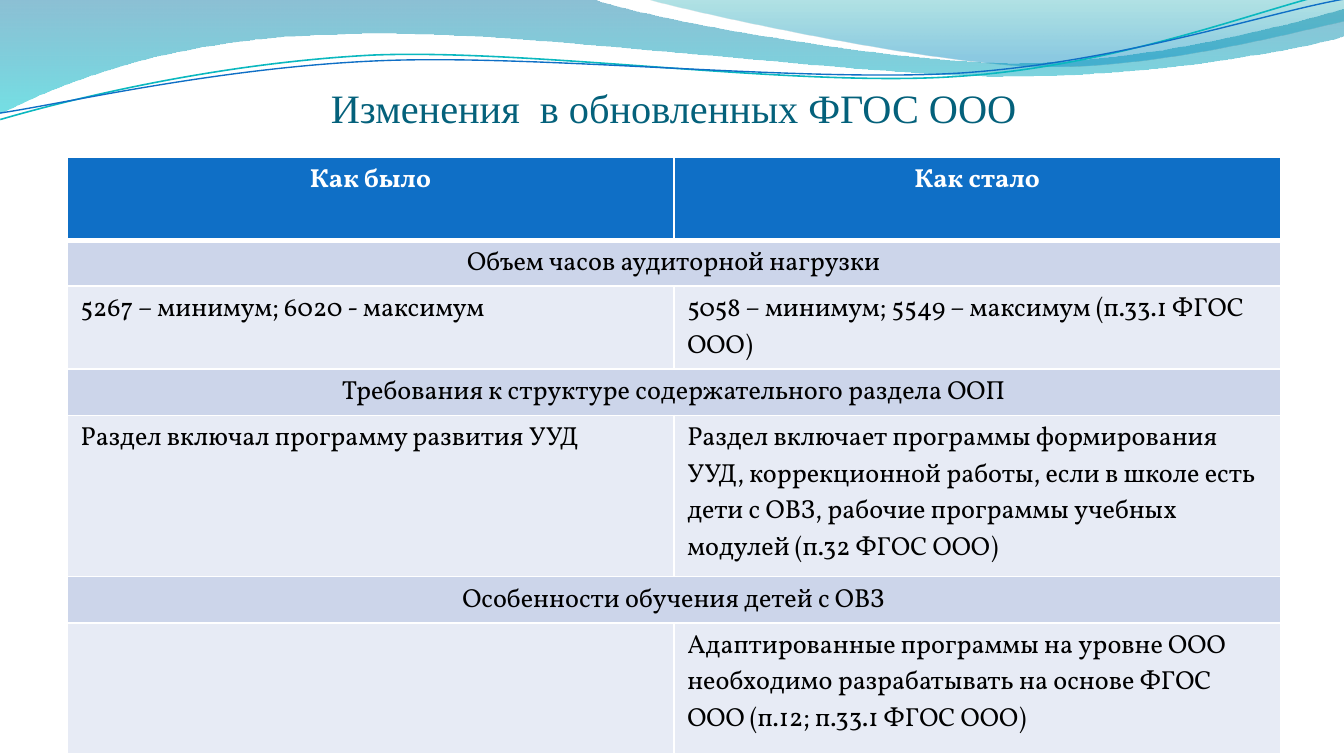
import pptx
import pptx.util
import pptx.dml.color
import pptx.enum.text
import pptx.oxml.ns
from lxml import etree

Pt = pptx.util.Pt
RGB = pptx.dml.color.RGBColor
ALIGN = pptx.enum.text.PP_ALIGN
qn = pptx.oxml.ns.qn

WHITE = RGB(0xFF, 0xFF, 0xFF)
BLACK = RGB(0, 0, 0)
BLUE = RGB(0x0F, 0x6F, 0xC6)
TEAL = RGB(0x0A, 0xB8, 0xBF)
INK = RGB(0x04, 0x61, 0x7B)
BAND = RGB(0xCC, 0xD5, 0xEA)
PALE = RGB(0xE7, 0xEB, 0xF5)
SEA = RGB(0x00, 0x74, 0xA1)
AQUA = RGB(0x00, 0xC6, 0xCF)
GREEN = RGB(0x00, 0xA1, 0xA9)
SKY = RGB(0x00, 0x8B, 0xBF)

TILT = 357.3
WAVES = [
    ([(0, 0), (317, -0.5), (343, 9.5, 478, 34, 546, 34),
      (614, 34, 690, 13.5, 720, 5), (720.5, 19.5),
      (708, 24, 626, 41, 537, 41), (448, 40.5, 275, 15, 185, 18.5),
      (93, 19.5, 33, 44.5, -0.5, 61)],
     [(0, SEA, 45), (1, AQUA, 55)]),
    ([(345, -0.5), (366.5, 6, 491, 33, 553.5, 35.5),
      (616.5, 37.5, 692, 17.5, 720, 11.5), (720, 0)],
     [(0, GREEN, 30), (0.8, SKY, 45)]),
]
LINES = [
    ([(-1, 47.1), (33.8, 38.7, 114.1, 22.4, 199.8, 22),
      (285.3, 22.5, 425.2, 50.1, 511.9, 48.2),
      (599.5, 46.8, 676.9, 19.4, 719.8, 11.9)], TEAL, 0.85),
    ([(-1, 43.6), (33.3, 40.2, 118.1, 24.6, 204.2, 25.2),
      (290.2, 25.7, 429.3, 47.8, 515.5, 46.4),
      (601.7, 44.4, 678.3, 22, 721.1, 16.5)], BLUE, 0.75),
]
ROWS = [
    (44.5, ["Как было", "Как стало"]),
    (24.7, ["Объем часов аудиторной нагрузки"]),
    (44.5, ["5267 – минимум; 6020 - максимум",
            "5058 – минимум; 5549 – максимум (п.33.1 ФГОС ООО)"]),
    (24.7, ["Требования к структуре содержательного раздела ООП"]),
    (86.4, ["Раздел включал программу развития УУД",
            "Раздел включает программы формирования УУД, коррекционной "
            "работы, если в школе есть дети с ОВЗ, рабочие программы "
            "учебных модулей (п.32 ФГОС ООО)"]),
    (24.7, ["Особенности обучения детей с ОВЗ"]),
    (70, ["", "Адаптированные программы на уровне ООО необходимо "
              "разрабатывать на основе ФГОС ООО (п.12; п.33.1 ФГОС ООО)"]),
]


def bend(shape, legs):
    """Turn each run of three straight legs into one cubic curve."""
    parts = iter(list(shape._element.iter(qn("a:lnTo"))))
    for leg in legs:
        first = next(parts)
        if len(leg) == 6:
            first.tag = qn("a:cubicBezTo")
            for part in (next(parts), next(parts)):
                first.append(part[0])
                part.getparent().remove(part)


def outline(slide, left, top, route, close):
    """Draw a route of straight and curved legs as a freeform."""
    dots = [(Pt(leg[i]), Pt(leg[i + 1]))
            for leg in route for i in range(0, len(leg), 2)]
    pen = slide.shapes.build_freeform(*dots[0], scale=1.0)
    pen.add_line_segments(dots[1:], close=close)
    shape = pen.convert_to_shape(Pt(left), Pt(top))
    shape.shadow.inherit = False
    bend(shape, route[1:])
    return shape


def shade(shape, stops):
    """Fill a shape with a see-through gradient that runs downwards."""
    shape.fill.gradient()
    shape.fill.gradient_angle = 270
    for stop, (place, tint, alpha) in zip(shape.fill.gradient_stops, stops):
        stop.position = place
        stop.color.rgb = tint
    marks = shape._element.spPr.iter(qn("a:srgbClr"))
    for mark, (place, tint, alpha) in zip(list(marks), stops):
        etree.SubElement(mark, qn("a:alpha"), val=str(alpha * 1000))


def add_waves(slide, left, top):
    """Draw the waves and thin lines along the top edge."""
    for route, stops in WAVES:
        shape = outline(slide, left, top, route, True)
        shape.line.fill.background()
        shade(shape, stops)
    for route, tint, width in LINES:
        shape = outline(slide, left, top, route, False)
        shape.rotation = TILT
        shape.fill.background()
        shape.line.color.rgb = tint
        shape.line.width = Pt(width)


def add_title(slide, left, top, width, height):
    """Place the centred title in its box."""
    box = slide.shapes.add_textbox(Pt(left), Pt(top), Pt(width), Pt(height))
    frame = box.text_frame
    frame.word_wrap = True
    frame.vertical_anchor = pptx.enum.text.MSO_ANCHOR.BOTTOM
    frame.margin_left = frame.margin_right = frame.margin_bottom = 0
    frame.margin_top = Pt(3.6)
    para = frame.paragraphs[0]
    para.text = "Изменения  в обновленных ФГОС ООО"
    para.alignment = ALIGN.CENTER
    para.font.name = "Times New Roman"
    para.font.size = Pt(21.6)
    para.font.color.rgb = INK


def edge(cell, side, width):
    """Give one side of a cell a white border."""
    line = etree.SubElement(cell._tc.get_or_add_tcPr(), qn("a:ln" + side),
                            w=str(Pt(width)))
    fill = etree.SubElement(line, qn("a:solidFill"))
    etree.SubElement(fill, qn("a:srgbClr"), val=str(WHITE))


def style(cell, text, fill, ink, head, mid):
    """Write and format one cell."""
    for side in "LRTB":
        edge(cell, side, 3 if head and side == "B" else 1)
    cell.fill.solid()
    cell.fill.fore_color.rgb = fill
    cell.margin_left = cell.margin_right = Pt(7.2)
    cell.margin_top = cell.margin_bottom = Pt(3)
    para = cell.text_frame.paragraphs[0]
    para.text = text
    para.alignment = ALIGN.CENTER if mid else ALIGN.LEFT
    para.font.name = "Vollkorn"
    para.font.size = Pt(14)
    para.font.bold = head
    para.font.color.rgb = ink


def add_grid(slide, left, top, width):
    """Build the table that compares the old and new rules."""
    height = sum(row[0] for row in ROWS)
    grid = slide.shapes.add_table(len(ROWS), 2, Pt(left), Pt(top),
                                  Pt(width), Pt(height)).table
    grid.horz_banding = False
    for col in grid.columns:
        col.width = Pt(width / 2)
    for r, (tall, texts) in enumerate(ROWS):
        grid.rows[r].height = Pt(tall)
        head, wide = r == 0, len(texts) == 1
        fill = BLUE if head else BAND if wide else PALE
        if wide:
            grid.cell(r, 0).merge(grid.cell(r, 1))
        for c, text in enumerate(texts):
            style(grid.cell(r, c), text, fill, WHITE if head else BLACK,
                  head, head or wide)


def main():
    """Build and save the slide."""
    deck = pptx.Presentation()
    deck.slide_width, deck.slide_height = Pt(720), Pt(405)
    slide = deck.slides.add_slide(deck.slide_layouts[6])
    add_waves(slide, 0, 0)
    add_title(slide, 37, 45.5, 648, 25)
    add_grid(slide, 36, 84.2, 650)
    deck.save("out.pptx")


if __name__ == "__main__":
    main()
